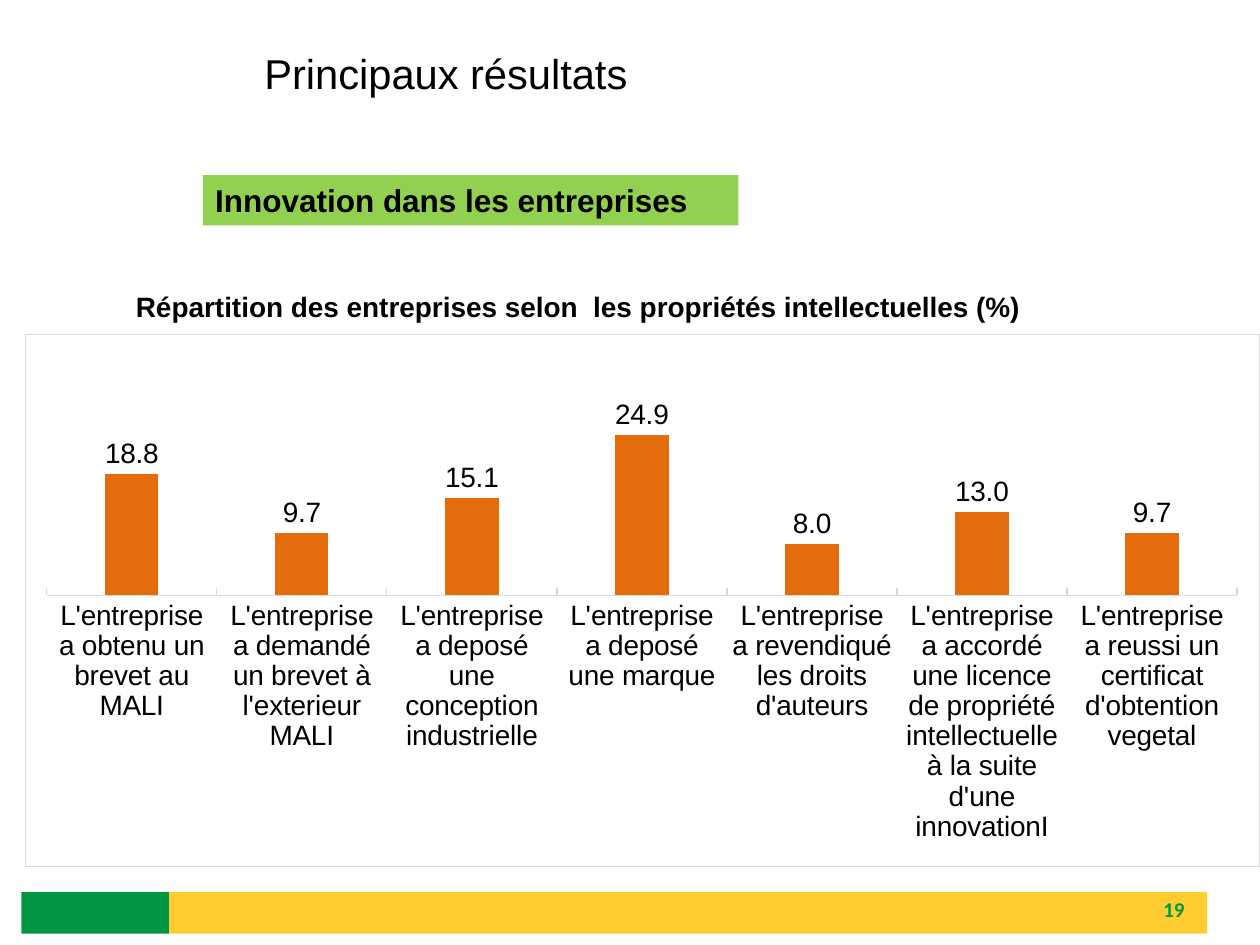
from lxml import etree
from pptx import Presentation
from pptx.chart.data import CategoryChartData
from pptx.dml.color import RGBColor
from pptx.enum import chart as ch, shapes, text
from pptx.oxml import parse_xml
from pptx.oxml.ns import nsdecls, qn
from pptx.util import Inches, Pt

BLACK, GREEN, YELLOW, LIME = "000000", "009644", "FFCD2F", "92D050"
ORANGE, GREY, WHITE = "E46C0A", "D9D9D9", "FFFFFF"

FOOTER = [((1.33, 7.08, 8.25, 0.33), YELLOW), ((0.17, 7.08, 1.17, 0.33), GREEN)]

# text, box, fill, font, paragraph format
TEXTS = [
    ("19", (7.17, 7.08, 2.33, 0.27), None,
     dict(name="Calibri", size=Pt(12), bold=True), GREEN,
     dict(alignment=text.PP_ALIGN.RIGHT)),
    ("Principaux résultats", (2, 0.44, 5.05, 0.39), None,
     dict(name="Arial", size=Pt(23.8), bold=False), BLACK,
     dict(line_spacing=0.7)),
    ("Répartition des entreprises selon  les propriétés intellectuelles (%)",
     (0.98, 2.25, 7.68, 0.37), None,
     dict(name="Arial", size=Pt(16), bold=True), BLACK, {}),
    ("Innovation dans les entreprises", (1.61, 1.39, 4.25, 0.4), LIME,
     dict(name="Arial", size=Pt(18), bold=True), BLACK,
     dict(alignment=text.PP_ALIGN.LEFT)),
]

CHART_BOX = (0.2, 2.65, 9.8, 4.23)
PLOT = dict(x=0.017, y=0.127, w=0.965, h=0.364)
NUMBER_FORMAT = "###0.0"
RATES = [
    ("L'entreprise a obtenu un brevet au MALI", 18.8),
    ("L'entreprise a demandé un brevet à l'exterieur MALI", 9.7),
    ("L'entreprise a deposé une conception industrielle", 15.1),
    ("L'entreprise a deposé une marque", 24.9),
    ("L'entreprise a revendiqué les droits d'auteurs", 8.0),
    ("L'entreprise a accordé une licence de propriété intellectuelle "
     "à la suite d'une innovationI", 13.0),
    ("L'entreprise a reussi un certificat d'obtention vegetal", 9.7),
]


def rgb(color):
    return RGBColor.from_string(color)


def assign(obj, **values):
    for key, value in values.items():
        setattr(obj, key, value)


def paint(sp, color):
    sp.fill.solid()
    sp.fill.fore_color.rgb = rgb(color)


def add_box(slide, box, fill=None):
    """Add a filled rectangle, or a plain text box when there is no fill."""
    at = [Inches(v) for v in box]
    if not fill:
        return slide.shapes.add_textbox(*at)
    sp = slide.shapes.add_shape(shapes.MSO_SHAPE.RECTANGLE, *at)
    sp.shadow.inherit = False
    paint(sp, fill)
    sp.line.fill.background()
    return sp


def add_text(slide, words, box, fill, font, color, layout):
    tf = add_box(slide, box, fill).text_frame
    assign(tf, word_wrap=True, vertical_anchor=text.MSO_ANCHOR.MIDDLE
           if words.isdigit() else text.MSO_ANCHOR.TOP)
    p = tf.paragraphs[0]
    assign(p, **layout)
    r = p.add_run()
    r.text = words
    assign(r.font, **font)
    r.font.color.rgb = rgb(color)


def frame_chart(chart):
    """Fix the inner plot area and give the chart a thin border."""
    area = chart._chartSpace.chart.plotArea
    for old in area.findall(qn("c:layout")):
        area.remove(old)
    layout = etree.Element(qn("c:layout"))
    manual = etree.SubElement(layout, qn("c:manualLayout"))
    settings = dict(layoutTarget="inner", xMode="edge", yMode="edge", **PLOT)
    for tag, value in settings.items():
        etree.SubElement(manual, qn("c:" + tag)).set("val", str(value))
    area.insert(0, layout)
    chart._chartSpace.chart.addnext(parse_xml(
        f'<c:spPr {nsdecls("c", "a")}>'
        f'<a:solidFill><a:srgbClr val="{WHITE}"/></a:solidFill>'
        f'<a:ln w="9525"><a:solidFill><a:srgbClr val="{GREY}"/></a:solidFill></a:ln>'
        '</c:spPr>'))


def add_rates_chart(slide):
    data = CategoryChartData(number_format=NUMBER_FORMAT)
    data.categories = [name for name, _ in RATES]
    data.add_series("Series 1", [value for _, value in RATES])
    chart = slide.shapes.add_chart(
        ch.XL_CHART_TYPE.COLUMN_CLUSTERED, *[Inches(v) for v in CHART_BOX], data).chart
    assign(chart, has_title=False, has_legend=False)
    assign(chart.font, name="Arial", size=Pt(16))
    chart.font.color.rgb = rgb(BLACK)

    axis = chart.category_axis
    assign(axis, major_tick_mark=ch.XL_TICK_MARK.INSIDE, has_major_gridlines=False)
    axis.format.line.width = Pt(0.75)
    axis.format.line.color.rgb = rgb(GREY)
    assign(chart.value_axis, visible=False, has_major_gridlines=False,
           minimum_scale=0, maximum_scale=30)

    plot = chart.plots[0]
    assign(plot, gap_width=219, overlap=-27, vary_by_categories=False,
           has_data_labels=True)
    assign(plot.data_labels, show_value=True, number_format=NUMBER_FORMAT,
           number_format_is_linked=False,
           position=ch.XL_LABEL_POSITION.OUTSIDE_END)
    paint(plot.series[0].format, ORANGE)
    frame_chart(chart)


def main():
    prs = Presentation()
    assign(prs, slide_width=Inches(10), slide_height=Inches(7.5))
    s = prs.slides.add_slide(prs.slide_layouts[6])
    for box, fill in FOOTER:
        add_box(s, box, fill)
    add_rates_chart(s)
    for item in TEXTS:
        add_text(s, *item)
    prs.save("out.pptx")


if __name__ == "__main__":
    main()
